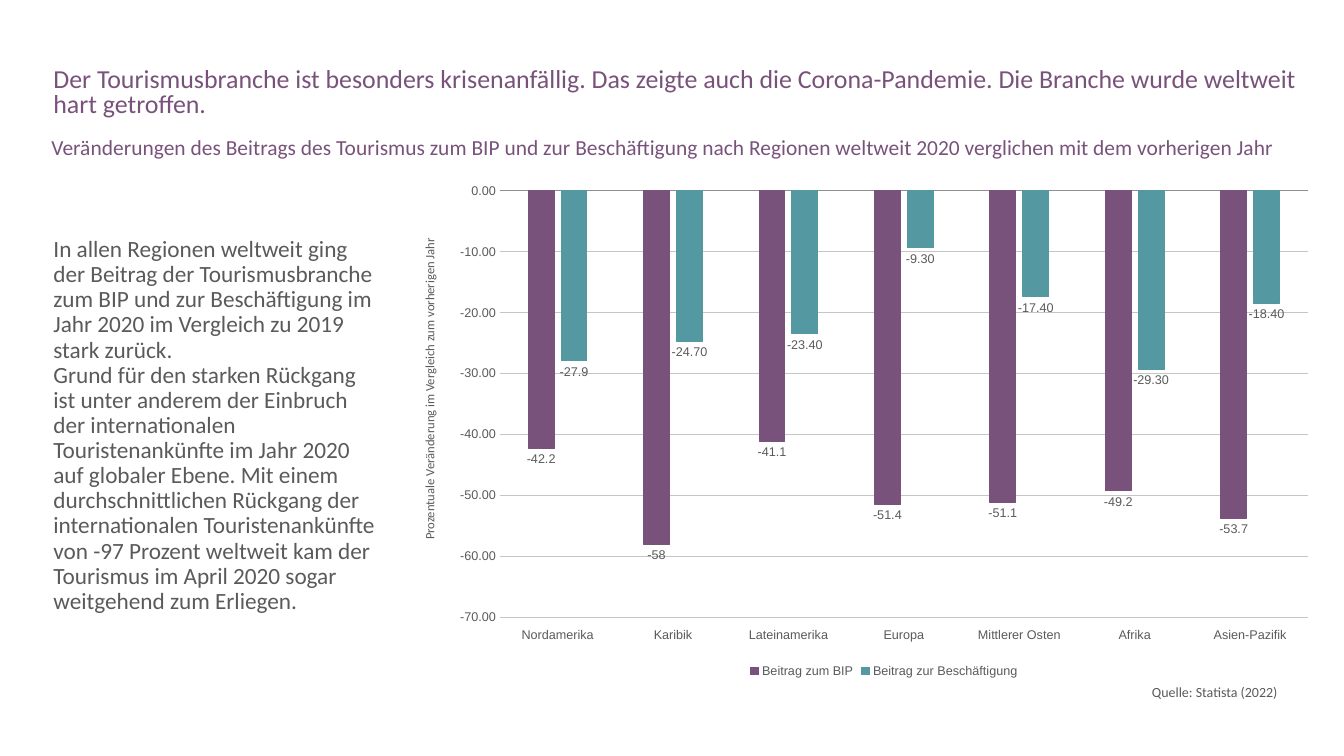
from dataclasses import dataclass

from lxml import etree
from pptx import Presentation
from pptx import util as u
from pptx.chart.data import CategoryChartData
from pptx.dml.color import RGBColor
from pptx.enum import chart as c
from pptx.enum import text as t
from pptx.oxml import ns

PURPLE = RGBColor(0x79, 0x52, 0x7B)
TEAL = RGBColor(0x54, 0x99, 0xA2)
GREY = RGBColor(0x59, 0x5A, 0x59)
AXIS_GREY = RGBColor(0x8E, 0x8E, 0x8E)
GRID_GREY = RGBColor(0xC5, 0xC5, 0xC5)


@dataclass
class TextBlock:
    box: tuple[float, float, float, float]
    paragraphs: list[str]
    size: float
    color: RGBColor
    line_spacing: float = 1.0
    anchor: t.MSO_ANCHOR = t.MSO_ANCHOR.TOP
    rotation: int = 0


@dataclass
class Series:
    name: str
    values: list[float]
    color: RGBColor
    label_format: str


HEADLINE = TextBlock(
    (0.43, 0.63, 12.54, 0.64),
    ["Der Tourismusbranche ist besonders krisenanfällig. Das zeigte auch die "
     "Corona-Pandemie. Die Branche wurde weltweit hart getroffen."],
    18.5, PURPLE, 0.8)
SUBTITLE = TextBlock(
    (0.41, 1.35, 12.56, 0.28),
    ["Veränderungen des Beitrags des Tourismus zum BIP und zur Beschäftigung nach "
     "Regionen weltweit 2020 verglichen mit dem vorherigen Jahr"],
    15.3, PURPLE, 0.7)
EXPLANATION = TextBlock(
    (0.43, 1.79, 3.42, 4.87),
    ["In allen Regionen weltweit ging der Beitrag der Tourismusbranche zum BIP und zur "
     "Beschäftigung im Jahr 2020 im Vergleich zu 2019 stark zurück.",
     "Grund für den starken Rückgang ist unter anderem der Einbruch der internationalen "
     "Touristenankünfte im Jahr 2020 auf globaler Ebene. Mit einem durchschnittlichen "
     "Rückgang der internationalen Touristenankünfte von -97 Prozent weltweit kam der "
     "Tourismus im April 2020 sogar weitgehend zum Erliegen."],
    16.6, GREY, 0.9, t.MSO_ANCHOR.MIDDLE)
SOURCE = TextBlock((11.33, 6.73, 2.25, 0.27), ["Quelle: Statista (2022)"], 10, GREY)
AXIS_CAPTION = TextBlock(
    (2.55, 3.62, 3.42, 0.25),
    ["Prozentuale Veränderung im Vergleich zum vorherigen Jahr"], 9, GREY, rotation=270)

REGIONS = ["Nordamerika", "Karibik", "Lateinamerika", "Europa", "Mittlerer Osten",
           "Afrika", "Asien-Pazifik"]
SERIES = [
    Series("Beitrag zum BIP", [-42.2, -58, -41.1, -51.4, -51.1, -49.2, -53.7],
           PURPLE, "General"),
    Series("Beitrag zur Beschäftigung", [-27.9, -24.7, -23.4, -9.3, -17.4, -29.3, -18.4],
           TEAL, "#,##0.00"),
]


def set_attributes(target, values: dict) -> None:
    for name, value in values.items():
        setattr(target, name, value)


def format_font(font, size: float, color: RGBColor, name: str) -> None:
    set_attributes(font, {"size": u.Pt(size), "bold": False, "name": name})
    font.color.rgb = color


def format_line(line, color: RGBColor) -> None:
    line.color.rgb = color
    line.width = u.Pt(0.75)


def write_text(shape, block: TextBlock) -> None:
    """Place a placeholder or text box and fill it with formatted text."""
    left, top, width, height = map(u.Inches, block.box)
    set_attributes(shape, {"left": left, "top": top, "width": width, "height": height,
                           "rotation": block.rotation})
    frame = shape.text_frame
    set_attributes(frame, {"word_wrap": True, "auto_size": t.MSO_AUTO_SIZE.NONE,
                           "vertical_anchor": block.anchor})
    frame.text = "\n".join(block.paragraphs)
    for paragraph in frame.paragraphs:
        set_attributes(paragraph, {"alignment": t.PP_ALIGN.LEFT, "space_before": u.Pt(0),
                                   "line_spacing": block.line_spacing})
        for run in paragraph.runs:
            format_font(run.font, block.size, block.color, "Calibri")


def format_axes(chart) -> None:
    category_axis, value_axis = chart.category_axis, chart.value_axis
    for axis in (category_axis, value_axis):
        axis.major_tick_mark = axis.minor_tick_mark = c.XL_TICK_MARK.NONE
        format_font(axis.tick_labels.font, 9, GREY, "Arial")
    category_axis.tick_label_position = c.XL_TICK_LABEL_POSITION.LOW
    format_line(category_axis.format.line, AXIS_GREY)
    set_attributes(value_axis, {"minimum_scale": -70, "maximum_scale": 0, "major_unit": 10,
                                "has_major_gridlines": True})
    set_attributes(value_axis.tick_labels,
                   {"number_format": "0.00", "number_format_is_linked": False})
    value_axis.format.line.fill.background()
    format_line(value_axis.major_gridlines.format.line, GRID_GREY)


def format_series(bars, series: Series) -> None:
    bars.invert_if_negative = False
    bars.format.fill.solid()
    bars.format.fill.fore_color.rgb = series.color
    format_line(bars.format.line, series.color)
    labels = bars.data_labels
    set_attributes(labels, {"show_value": True, "number_format": series.label_format,
                            "number_format_is_linked": False,
                            "position": c.XL_LABEL_POSITION.OUTSIDE_END})
    format_font(labels.font, 9, GREY, "Arial")


def format_first_label(bars) -> None:
    """Show the first value of a series with a single decimal."""
    label = bars.points[0].data_label
    label.position = c.XL_LABEL_POSITION.OUTSIDE_END
    format_font(label.font, 9, GREY, "Arial")
    index = bars.data_labels._element.find(ns.qn("c:dLbl")).find(ns.qn("c:idx"))
    number_format = etree.Element(ns.qn("c:numFmt"), formatCode="General", sourceLinked="0")
    index.addnext(number_format)


def add_region_chart(slide) -> None:
    data = CategoryChartData()
    data.categories = REGIONS
    for series in SERIES:
        data.add_series(series.name, series.values)
    box = map(u.Inches, (4.39, 1.72, 8.76, 5.05))
    chart = slide.shapes.add_chart(c.XL_CHART_TYPE.COLUMN_CLUSTERED, *box, data).chart
    set_attributes(chart, {"has_title": False, "has_legend": True})
    format_font(chart.font, 10, GREY, "Arial")
    set_attributes(chart.legend, {"position": c.XL_LEGEND_POSITION.BOTTOM,
                                  "include_in_layout": False})
    format_font(chart.legend.font, 9, GREY, "Arial")
    format_axes(chart)
    plot = chart.plots[0]
    set_attributes(plot, {"gap_width": 219, "overlap": -27, "vary_by_categories": False})
    for bars, series in zip(plot.series, SERIES):
        format_series(bars, series)
    format_first_label(plot.series[1])


def main() -> None:
    presentation = Presentation()
    set_attributes(presentation, {"slide_width": u.Inches(7.5 * 16 / 9),
                                  "slide_height": u.Inches(7.5)})
    # The comparison layout offers a title and two unbulleted text placeholders
    slide = presentation.slides.add_slide(presentation.slide_layouts[4])
    placeholders = {shape.placeholder_format.idx: shape for shape in slide.placeholders}

    # Headline, subtitle and explanation
    for index, block in {0: HEADLINE, 1: SUBTITLE, 3: EXPLANATION}.items():
        write_text(placeholders.pop(index), block)
    for unused in placeholders.values():
        unused.element.getparent().remove(unused.element)

    # Chart with its caption and source
    add_region_chart(slide)
    for block in (SOURCE, AXIS_CAPTION):
        write_text(slide.shapes.add_textbox(0, 0, 0, 0), block)

    presentation.save("out.pptx")


if __name__ == "__main__":
    main()
